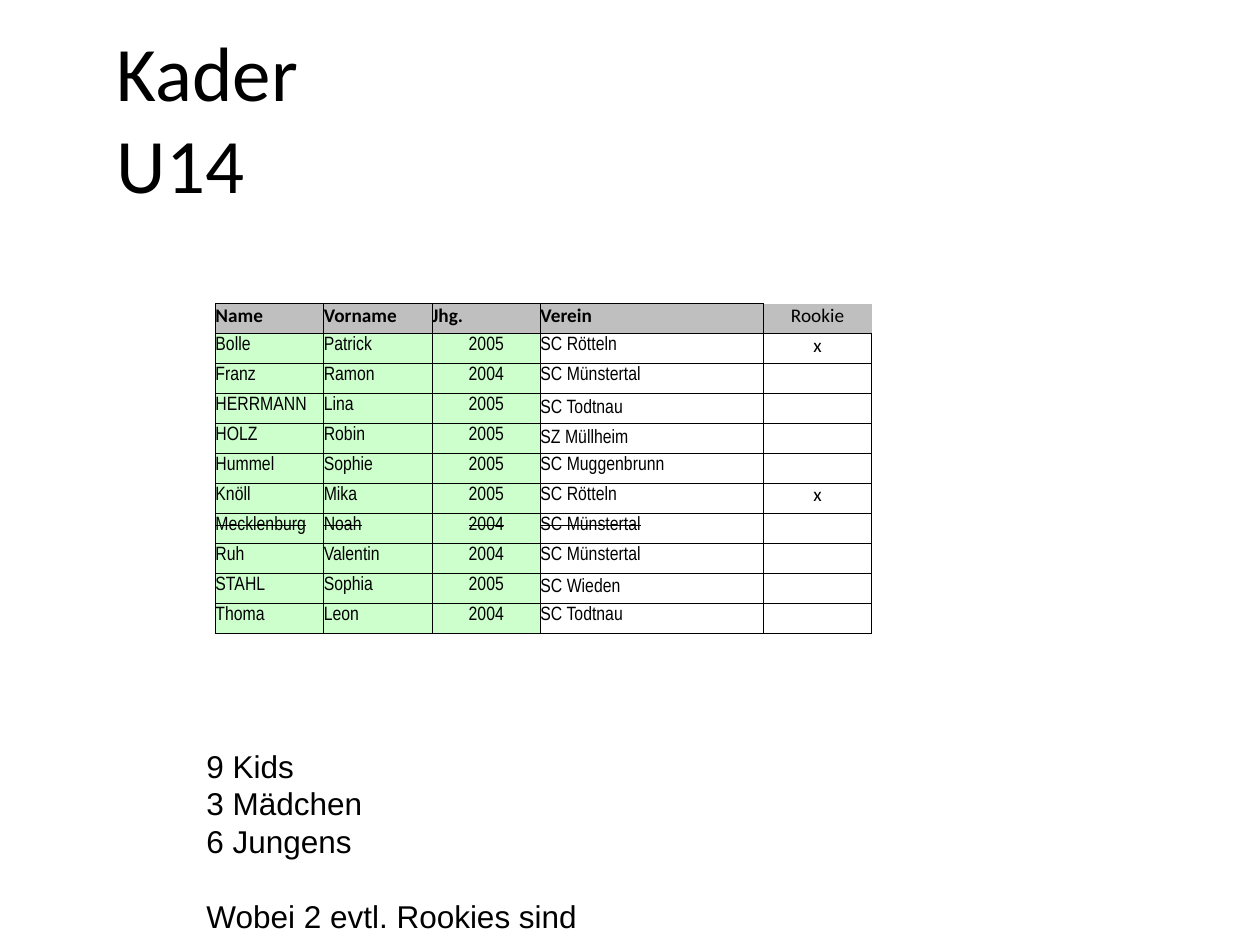
"""Build the squad slide of the U14 team with its table and head count."""
from lxml.etree import SubElement
from pptx import Presentation
from pptx.dml.color import RGBColor
from pptx.enum.text import MSO_ANCHOR, PP_ALIGN
from pptx.oxml.ns import qn
from pptx.util import Inches, Pt

BLACK = RGBColor(0x00, 0x00, 0x00)
GREY = RGBColor(0xBF, 0xBF, 0xBF)
GREEN = RGBColor(0xCC, 0xFF, 0xCC)

HEADINGS = ["Name", "Vorname", "Jhg.", "Verein", "Rookie"]
PLAYERS = [
    ("Bolle", "Patrick", "2005", "SC Rötteln", "x"),
    ("Franz", "Ramon", "2004", "SC Münstertal", ""),
    ("HERRMANN", "Lina", "2005", "SC Todtnau", ""),
    ("HOLZ", "Robin", "2005", "SZ Müllheim", ""),
    ("Hummel", "Sophie", "2005", "SC Muggenbrunn", ""),
    ("Knöll", "Mika", "2005", "SC Rötteln", "x"),
    ("Mecklenburg", "Noah", "2004", "SC Münstertal", ""),
    ("Ruh", "Valentin", "2004", "SC Münstertal", ""),
    ("STAHL", "Sophia", "2005", "SC Wieden", ""),
    ("Thoma", "Leon", "2004", "SC Todtnau", ""),
]
LOW_CLUBS = {"HERRMANN", "HOLZ", "STAHL"}
WITHDRAWN = "Mecklenburg"
COLUMN_WIDTHS = [0.86, 0.86, 0.86, 1.77, 0.86]
TABLE_HEIGHT = 2.62
YEAR, CLUB, ROOKIE = 2, 3, 4


def add_span(para, text, formats):
    span = para.add_run()
    span.text = text
    for name, value in formats.items():
        setattr(span.font, name, value)
    span.font.color.rgb = BLACK
    return span


def add_border(cell, side, visible):
    line = SubElement(cell._tc.get_or_add_tcPr(), qn(f"a:ln{side}"), w=str(Pt(0.5)))
    if visible:
        fill = SubElement(line, qn("a:solidFill"))
        SubElement(fill, qn("a:srgbClr"), val=str(BLACK))
    else:
        SubElement(line, qn("a:noFill"))


deck = Presentation()
deck.slide_width, deck.slide_height = Inches(10), Inches(7.5)
page = deck.slides.add_slide(deck.slide_layouts[6])

title = page.shapes.add_textbox(Inches(0.83), Inches(0.3), Inches(8.83), Inches(1.25)).text_frame
title.word_wrap = True
title.vertical_anchor = MSO_ANCHOR.MIDDLE
title_format = {"name": "Calibri", "size": Pt(44)}
add_span(title.paragraphs[0], "Kader", title_format)
title.paragraphs[0].add_line_break()
add_span(title.paragraphs[0], "U14", title_format)

summary = page.shapes.add_textbox(Inches(1.54), Inches(5.88), Inches(3.17), Inches(1.92)).text_frame
summary.word_wrap = False
for index, text in enumerate(["9 Kids", "3 Mädchen", "6 Jungens", "Wobei 2 evtl. Rookies sind"]):
    para = summary.add_paragraph() if index else summary.paragraphs[0]
    para.line_spacing = Pt(21.5)
    add_span(para, text, {"name": "Arial", "size": Pt(18)})
para.space_before = Pt(21.5)

rows = [HEADINGS, *PLAYERS]
frame = page.shapes.add_table(len(rows), len(HEADINGS), Inches(1.71), Inches(2.41),
                              Inches(sum(COLUMN_WIDTHS)), Inches(TABLE_HEIGHT))
squad = frame.table
squad.first_row = squad.horz_banding = False
for column, width in zip(squad.columns, COLUMN_WIDTHS):
    column.width = Inches(width)

for row_index, row in enumerate(rows):
    squad.rows[row_index].height = Inches(TABLE_HEIGHT / len(rows))
    heading = row_index == 0
    for column_index, text in enumerate(row):
        cell = squad.cell(row_index, column_index)
        rookie = column_index == ROOKIE
        low = heading or rookie or (column_index == CLUB and row[0] in LOW_CLUBS)
        cell_format = {
            "margin_left": 0, "margin_right": 0, "margin_top": 0, "margin_bottom": Inches(0.05),
            "vertical_anchor": MSO_ANCHOR.BOTTOM if low else MSO_ANCHOR.MIDDLE,
        }
        for name, value in cell_format.items():
            setattr(cell, name, value)

        for side in "LRTB":
            add_border(cell, side, not (heading and rookie and side in "RT"))
        if heading or column_index < CLUB:
            cell.fill.solid()
            cell.fill.fore_color.rgb = GREY if heading else GREEN
        else:
            cell.fill.background()

        para = cell.text_frame.paragraphs[0]
        if rookie or (column_index == YEAR and not heading):
            para.alignment = PP_ALIGN.CENTER
        if text:
            span = add_span(para, text, {
                "name": "Calibri" if heading or rookie else "Arial Narrow",
                "size": Pt(11),
                "bold": heading and not rookie or (not heading),
            })
            span.font.bold = heading and not rookie
            if row[0] == WITHDRAWN:
                span._r.get_or_add_rPr().set("strike", "sngStrike")
        else:
            SubElement(para._p, qn("a:endParaRPr"), sz="1100")

deck.save("out.pptx")
